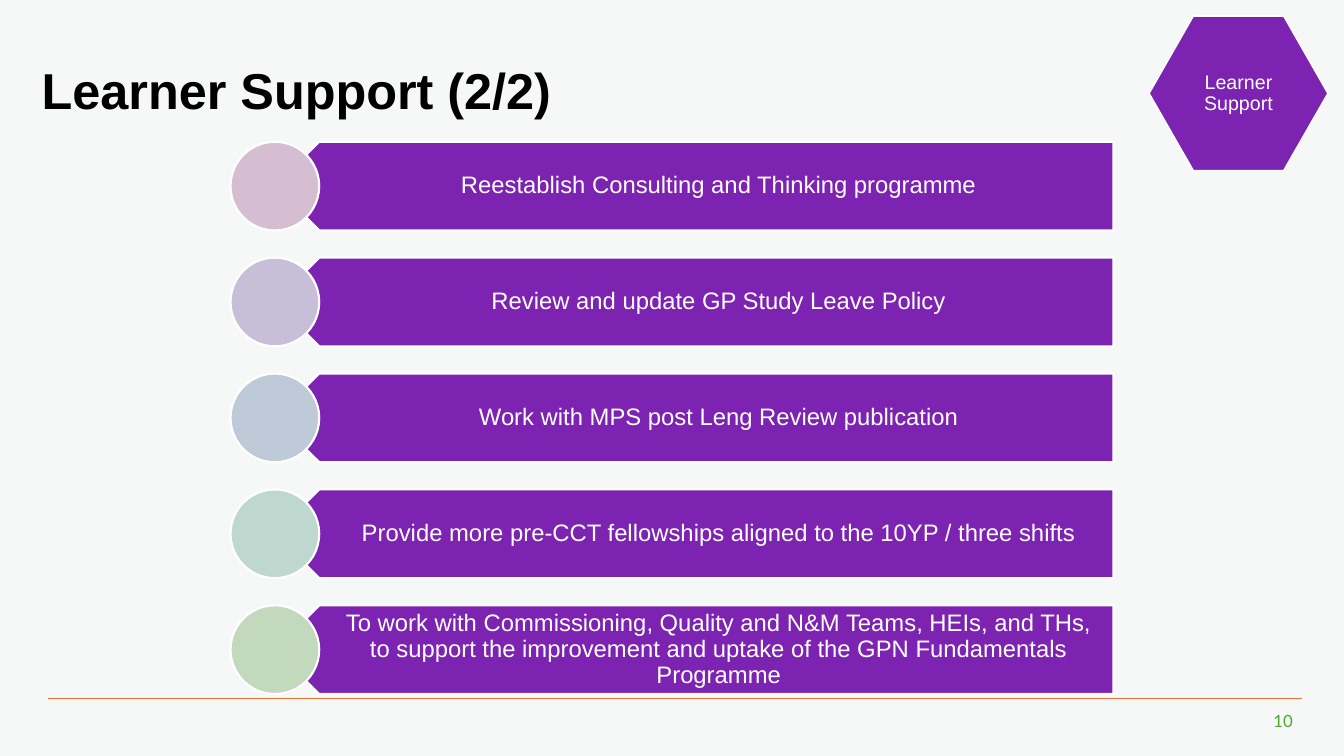
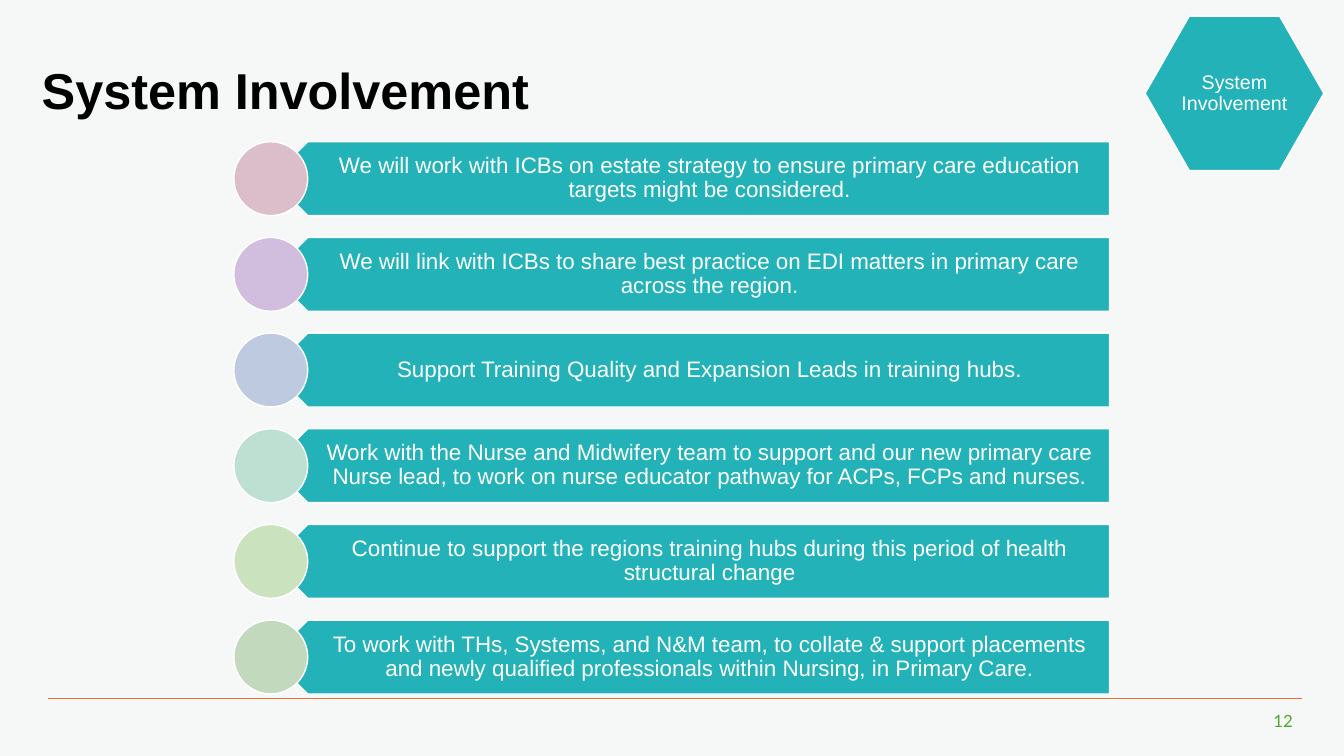
from pptx import Presentation, util as u
from pptx.dml.color import RGBColor
from pptx.enum import shapes, text
from pptx.oxml.ns import qn
from lxml import etree

WHITE, PAPER, RULE, GREEN, BLACK = "FFFFFF", "F6F8F8", "E97132", "4EA72E", "000000"
MID, LEFT, RIGHT = text.PP_ALIGN.CENTER, text.PP_ALIGN.LEFT, text.PP_ALIGN.RIGHT
KIND = shapes.MSO_SHAPE
# Square grid: 100 columns across the slide, 56.25 rows down it
TOP, END, WIDE = 10.55, 51.65, 62.4

DECK = [
    dict(title="Learner Support (2/2)", tag="Learner Support", page="10",
         hue="7D23B1", size=17, high=6.6, left=17.15, edge=1.5, hexa=85.5,
         rows=[
             ("D6BED2", "Reestablish Consulting and Thinking programme"),
             ("C7BED7", "Review and update GP Study Leave Policy"),
             ("BECAD8", "Work with MPS post Leng Review publication"),
             ("BED8D0", "Provide more pre-CCT fellowships aligned to the 10YP / three shifts"),
             ("C2D9BE", "To work with Commissioning, Quality and N&M Teams, HEIs, and THs, "
                        "to support the improvement and uptake of the GPN Fundamentals Programme"),
         ]),
    dict(title="System Involvement", tag="System Involvement", page="12",
         hue="22B2B8", size=16, high=5.5, left=17.4, edge=1, hexa=85.2,
         rows=[
             ("DBBEC9", "We will work with ICBs on estate strategy to ensure primary care "
                        "education targets might be considered."),
             ("D1BDDD", "We will link with ICBs to share best practice on EDI matters in "
                        "primary care across the region."),
             ("BDCADF", "Support Training Quality and Expansion Leads in training hubs."),
             ("BDE0D3", "Work with the Nurse and Midwifery team to support and our new primary "
                        "care Nurse lead, to work on nurse educator pathway for ACPs, FCPs and nurses."),
             ("CAE2BD", "Continue to support the regions training hubs during this period of "
                        "health structural change"),
             ("C2D9BE", "To work with THs, Systems, and N&M team, to collate & support placements "
                        "and newly qualified professionals within Nursing, in Primary Care."),
         ]),
]

prs = Presentation()
prs.slide_width, prs.slide_height = u.Inches(13.33), u.Inches(7.5)
unit = prs.slide_width / 100
rgb = RGBColor.from_string


def grid(*cells):
    return [round(c * unit) for c in cells]


def write(shape, words, size, hue=WHITE, align=MID, font="Arial", pad=(0, 0, 0, 0), bold=False):
    """Fill a shape with one paragraph; pad is left, top, right, bottom in columns."""
    frame = shape.text_frame
    frame.text, frame.word_wrap = words, True
    frame.auto_size = text.MSO_AUTO_SIZE.NONE
    frame.vertical_anchor = text.MSO_ANCHOR.MIDDLE
    (frame.margin_left, frame.margin_top,
     frame.margin_right, frame.margin_bottom) = grid(*pad)
    para = frame.paragraphs[0]
    para.alignment, para.line_spacing = align, 0.9
    para.font.size, para.font.name, para.font.bold = u.Pt(size), font, bold
    para.font.color.rgb = rgb(hue)


back = prs.slide_master.background.fill
back.solid()
back.fore_color.rgb = rgb(PAPER)
plan = prs.slide_layouts[5]
head = plan.placeholders[0]
head.left, head.top, head.width, head.height = grid(3.1, 3.4, 93.5, 7.1)

for page in DECK:
    slide = prs.slides.add_slide(plan)
    draw = slide.shapes
    write(draw.title, page["title"], 36, BLACK, LEFT, bold=True)

    rule = draw.add_connector(shapes.MSO_CONNECTOR.STRAIGHT, *grid(3.55, 52, 96.85, 52))
    rule.line.color.rgb, rule.line.width = rgb(RULE), u.Pt(0.5)
    etree.SubElement(rule._element.spPr, qn("a:effectLst"))
    write(draw.add_textbox(*grid(90, 52.6, 6.2, 2.25)), page["page"], 12, GREEN, RIGHT, "Lato")

    high, left, hue = page["high"], page["left"], page["hue"]
    start = left + high / 2
    step = (END - TOP - high) / (len(page["rows"]) - 1)
    forms = []
    for i, (tint, words) in enumerate(page["rows"]):
        y = TOP + i * step
        bar = draw.add_shape(KIND.PENTAGON, *grid(start, y, WIDE, high))
        bar.rotation = 180
        label = draw.add_textbox(*grid(start + high / 4, y, WIDE - high / 4, high))
        write(label, words, page["size"], pad=(0.44 * high, 0.5, 0.9, 0.5))
        dot = draw.add_shape(KIND.OVAL, *grid(left, y, high, high))
        forms += [(bar, hue, page["edge"]), (dot, tint, page["edge"])]

    badge = draw.add_shape(KIND.HEXAGON, *grid(page["hexa"], 1.2, 13.3, 11.5))
    badge.adjustments[0] = 0.286
    write(badge, page["tag"], 14)
    forms.append((badge, hue, 1))

    for form, tint, edge in forms:
        form.shadow.inherit = False
        form.fill.solid()
        form.fill.fore_color.rgb = rgb(tint)
        form.line.color.rgb, form.line.width = rgb(WHITE), u.Pt(edge)

prs.save("out.pptx")
